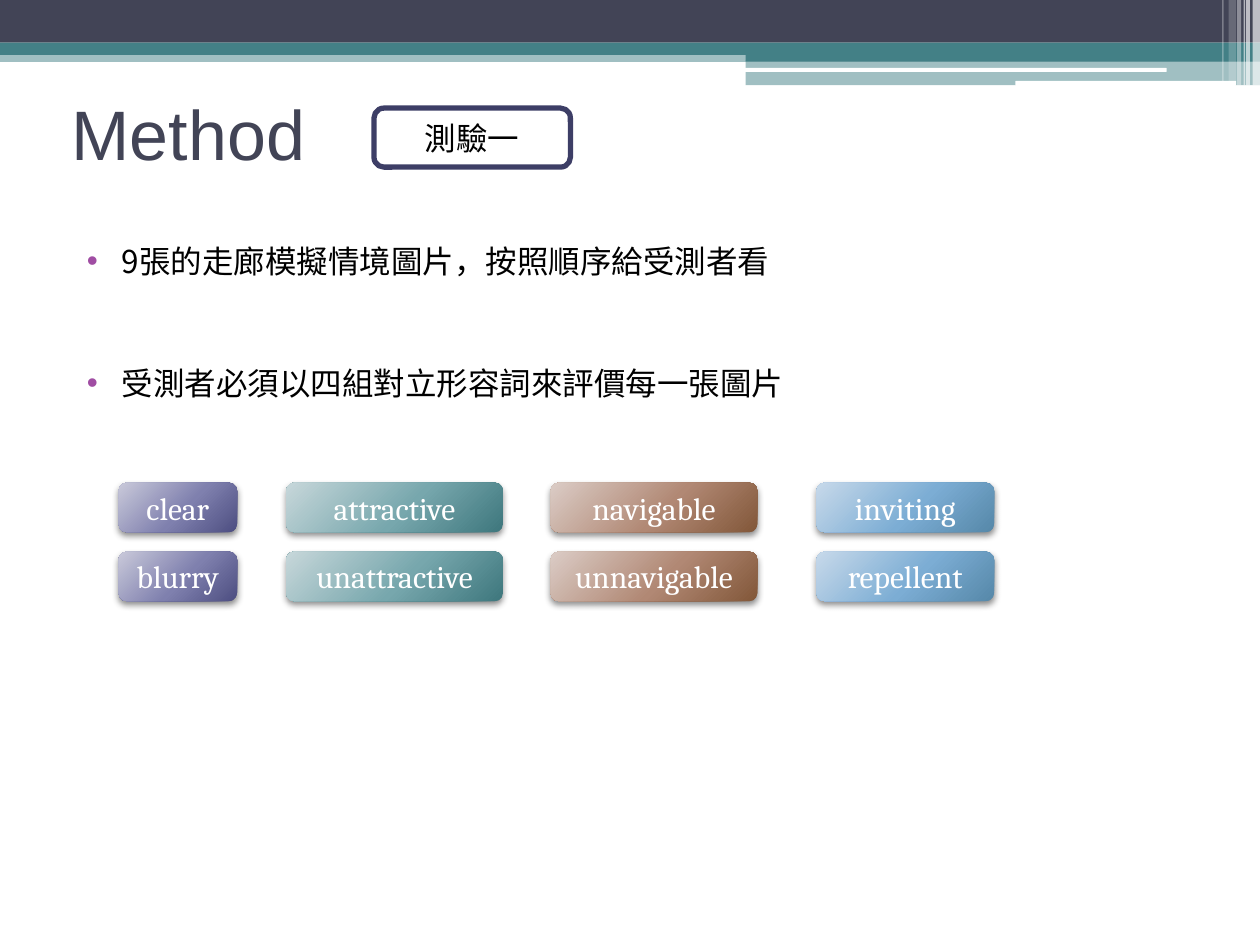
from lxml import etree
from pptx import Presentation, util as u
from pptx.dml.color import RGBColor
from pptx.enum import shapes, text
from pptx.oxml import parse_xml
from pptx.oxml.ns import nsdecls, qn

COLORS = {
    "dark": "424456", "teal": "438086", "white": "FFFFFF", "black": "000000",
    "bullet": "A04DA3", "outline": "3D3E66",
}
GRADIENTS = {
    "violet": ("C9C9DA", "7F80AE", "4D4E81"),
    "teal": ("C7D7DA", "77A7AD", "3E777D"),
    "brown": ("DBCCC6", "B18874", "825739"),
    "blue": ("C7D9EA", "7CADD4", "5688A9"),
}
CJK = "Noto Sans CJK SC"
RECT = shapes.MSO_SHAPE.RECTANGLE
ROUND = shapes.MSO_SHAPE.ROUNDED_RECTANGLE

# Header: shape, left, top, width, height (cm), colour, opacity (%)
HEADER = [
    (RECT, 0, 1.02, 25.4, 0.23, "teal", 50),
    (RECT, 0, 0, 25.4, 0.86, "dark", 100),
    (RECT, 0, 0.86, 25.4, 0.25, "teal", 100),
    (RECT, 15.03, 0.99, 10.37, 0.25, "teal", 100),
    (RECT, 15.03, 1.22, 10.37, 0.5, "teal", 50),
    (ROUND, 15.01, 1.37, 8.51, 0.08, "white", 100),
    (ROUND, 20.47, 1.63, 4.45, 0.1, "white", 100),
]
# Stripes in the corner: left, width, height (cm), opacity (%)
STRIPES = [
    (25.25, 0.15, 1.73, 65), (25.12, 0.08, 1.73, 65), (25.07, 0.03, 1.73, 60),
    (24.94, 0.08, 1.73, 40), (24.77, 0.15, 1.63, 20), (24.64, 0.03, 1.63, 30),
]
# Adjective pairs: left, width (cm), gradient, words
PAIRS = [
    (2.39, 2.39, "violet", ("clear", "blurry")),
    (5.77, 4.37, "teal", ("attractive", "unattractive")),
    (11.1, 4.17, "brown", ("navigable", "unnavigable")),
    (16.46, 3.58, "blue", ("inviting", "repellent")),
]


def write(p, words, size=18, font="Cambria", color="black", align=None):
    p.alignment = align
    r = p.add_run()
    r.text = words
    r.font.size = u.Pt(size)
    r.font.name = font
    r.font.color.rgb = RGBColor.from_string(COLORS[color])
    etree.SubElement(r.font._element, qn("a:ea"), typeface=CJK)


def add_bar(s, kind, left, top, width, height, color, opacity):
    sp = s.shapes.add_shape(kind, u.Cm(left), u.Cm(top), u.Cm(width), u.Cm(height))
    sp.shadow.inherit = False
    sp.line.fill.background()
    sp.fill.solid()
    sp.fill.fore_color.rgb = RGBColor.from_string(COLORS[color])
    if opacity < 100:
        clr = sp._element.spPr.find(".//" + qn("a:srgbClr"))
        etree.SubElement(clr, qn("a:alpha"), val=str(opacity * 1000))


def add_label(s, words, left, top, width, height, color):
    sp = s.shapes.add_shape(ROUND, u.Cm(left), u.Cm(top), u.Cm(width), u.Cm(height))
    tf = sp.text_frame
    tf.word_wrap = True
    tf.vertical_anchor = text.MSO_ANCHOR.MIDDLE
    write(tf.paragraphs[0], words, color=color, align=text.PP_ALIGN.CENTER)
    return sp


def add_chip(s, words, left, top, width, gradient):
    sp = add_label(s, words, left, top, width, 1, "white")
    stops = "".join(
        f'<a:gs pos="{pos}"><a:srgbClr val="{c}"/></a:gs>'
        for pos, c in zip((0, 55000, 100000), GRADIENTS[gradient]))
    spPr = sp._element.spPr
    spPr.append(parse_xml(
        f'<a:gradFill {nsdecls("a")} rotWithShape="1"><a:gsLst>{stops}</a:gsLst>'
        '<a:path path="circle"><a:fillToRect l="-40000" t="-90000" '
        'r="140000" b="190000"/></a:path></a:gradFill>'))
    sp.line.fill.background()
    spPr.append(parse_xml(
        f'<a:effectLst {nsdecls("a")}><a:outerShdw blurRad="{u.Pt(4)}" '
        f'dist="{u.Pt(2)}" dir="5400000" rotWithShape="0">'
        '<a:srgbClr val="000000"><a:alpha val="45000"/></a:srgbClr>'
        '</a:outerShdw></a:effectLst>'))


def add_bullets(s, items, left, top, width, height, gap):
    tf = s.shapes.add_textbox(
        u.Cm(left), u.Cm(top), u.Cm(width), u.Cm(height)).text_frame
    tf.word_wrap = True
    for i, item in enumerate(items):
        p = tf.add_paragraph() if i else tf.paragraphs[0]
        p.space_before = u.Pt(gap if i else 3)
        write(p, item, font=CJK)
        pPr = p._p.get_or_add_pPr()
        pPr.set("marL", str(u.Cm(1.02)))
        pPr.set("indent", str(u.Cm(-0.71)))
        clr = etree.SubElement(pPr, qn("a:buClr"))
        etree.SubElement(clr, qn("a:srgbClr"), val=COLORS["bullet"])
        etree.SubElement(pPr, qn("a:buFont"), typeface="Arial")
        etree.SubElement(pPr, qn("a:buChar"), char="•")


def add_title(s, words):
    title = s.shapes.title
    title.left, title.top = u.Cm(1.19), u.Cm(1.19)
    title.width, title.height = u.Cm(22.86), u.Cm(2.97)
    tf = title.text_frame
    tf.vertical_anchor = text.MSO_ANCHOR.MIDDLE
    write(tf.paragraphs[0], words, size=40, font="Arial", color="dark",
          align=text.PP_ALIGN.LEFT)


def main():
    prs = Presentation()
    prs.slide_width, prs.slide_height = u.Cm(25.4), u.Cm(19.05)
    s = prs.slides.add_slide(prs.slide_layouts[5])

    # Header band
    for bar in HEADER:
        add_bar(s, *bar)
    for left, width, height, opacity in STRIPES:
        add_bar(s, RECT, left, 0, width, height, "white", opacity)

    # Title and test label
    add_title(s, "Method")
    label = add_label(s, "測驗一", 7.54, 2.18, 3.96, 1.19, "black")
    label.shadow.inherit = False
    label.fill.background()
    label.line.color.rgb = RGBColor.from_string(COLORS["outline"])
    label.line.width = u.Pt(3)

    # Procedure
    add_bullets(s, ["9張的走廊模擬情境圖片，按照順序給受測者看",
                    "受測者必須以四組對立形容詞來評價每一張圖片"],
                1.19, 4.75, 22.43, 7.16, gap=48)

    # Opposite adjectives
    for left, width, gradient, words in PAIRS:
        for row, word in enumerate(words):
            add_chip(s, word, left, 9.73 + 1.39 * row, width, gradient)

    prs.save("out.pptx")


if __name__ == "__main__":
    main()
